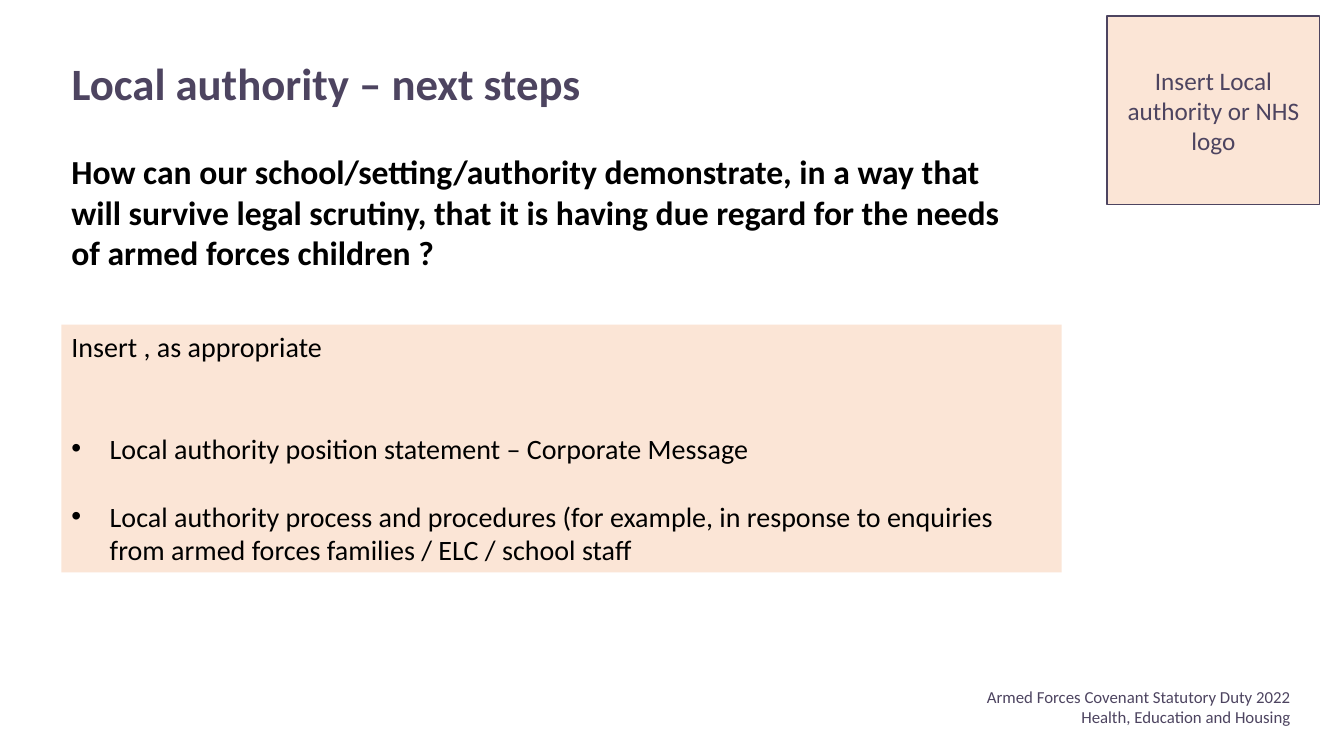
from dataclasses import dataclass
from lxml.etree import SubElement
from pptx import Presentation
from pptx.dml.color import RGBColor as RGB
from pptx.enum.shapes import MSO_SHAPE as Shape
from pptx.enum.text import MSO_ANCHOR as Anchor, MSO_AUTO_SIZE as Auto, PP_ALIGN as Align
from pptx.oxml.ns import qn
from pptx.util import Pt


@dataclass(frozen=True)
class Theme:
    font: str = "Calibri"
    plum: RGB = RGB(0x4D, 0x44, 0x60)
    peach: RGB = RGB(0xFB, 0xE5, 0xD6)
    black: RGB = RGB(0, 0, 0)
    head: int = 32
    ask: int = 24
    body: int = 20
    logo: int = 18
    foot: int = 12


theme = Theme()
PX = 9144


def px(*nums):
    return [n * PX for n in nums]


def write(shape, lines, size, color, bold=False, align=Align.LEFT, anchor=Anchor.TOP):
    frame = shape.text_frame
    frame.word_wrap = True
    frame.auto_size = Auto.NONE
    frame.vertical_anchor = anchor
    frame.text = "\n".join(lines)
    for para in frame.paragraphs:
        para.alignment = align
        font = para.font
        font.name, font.size, font.bold = theme.font, Pt(size), bold
        font.color.rgb = color
    return frame.paragraphs


deck = Presentation()
deck.slide_width, deck.slide_height = px(1333, 750)
slide = deck.slides.add_slide(deck.slide_layouts[5])
shapes = slide.shapes

foot = shapes.add_textbox(*px(903, 676, 387, 50))
write(foot, ["Armed Forces Covenant Statutory Duty 2022", "Health, Education and Housing"],
      theme.foot, theme.plum, align=Align.RIGHT)

title = shapes.title
title.left, title.top, title.width, title.height = px(61, 40, 1150, 91)
head = write(title, ["Local authority – next steps"], theme.head, theme.plum,
             bold=True, anchor=Anchor.MIDDLE)
head[0].line_spacing = 0.9

panel = shapes.add_shape(Shape.RECTANGLE, *px(61, 322, 992, 246))
logo = shapes.add_shape(Shape.RECTANGLE, *px(1098, 16, 211, 187))
for box in (panel, logo):
    box.shadow.inherit = False
    box.fill.solid()
    box.fill.fore_color.rgb = theme.peach
panel.line.fill.background()
logo.line.color.rgb = theme.plum
logo.line.width = Pt(1)

steps = write(panel, [
    "Insert , as appropriate",
    "Local authority position statement – Corporate Message",
    "Local authority process and procedures (for example, in response to enquiries "
    "from armed forces families / ELC / school staff",
], theme.body, theme.black)
for step, gap in zip(steps[1:], (48.8, 24.4)):
    step.space_before = Pt(gap)
    props = step._p.get_or_add_pPr()
    props.set("marL", str(38 * PX))
    props.set("indent", str(-38 * PX))
    SubElement(props, qn("a:buFont")).set("typeface", "Arial")
    SubElement(props, qn("a:buChar")).set("char", "•")
    props.append(props.find(qn("a:defRPr")))

write(logo, ["Insert Local authority or NHS logo"], theme.logo, theme.plum,
      align=Align.CENTER, anchor=Anchor.MIDDLE)

ask = shapes.add_textbox(*px(61, 145, 970, 131))
write(ask, ["How can our school/setting/authority demonstrate, in a way that will survive "
            "legal scrutiny, that it is having due regard for the needs of armed forces children ?"],
      theme.ask, theme.black, bold=True)

deck.save("out.pptx")
